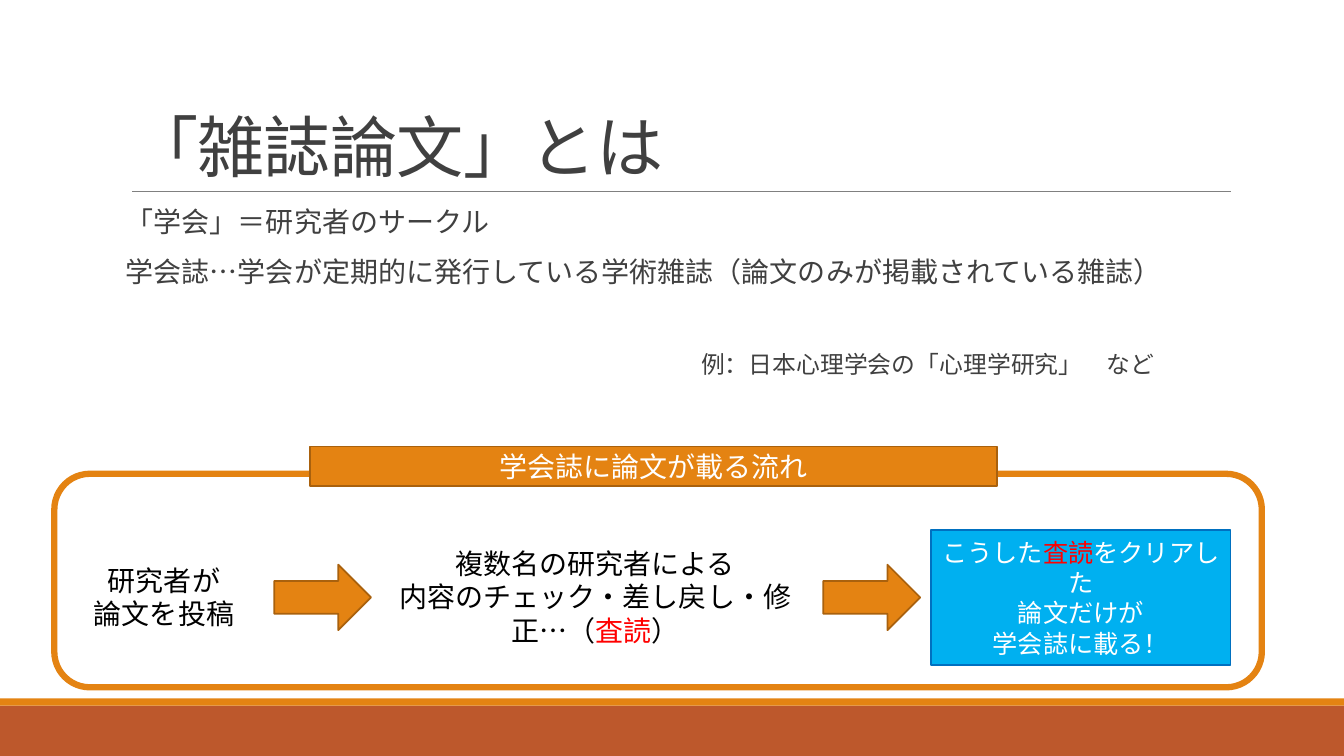
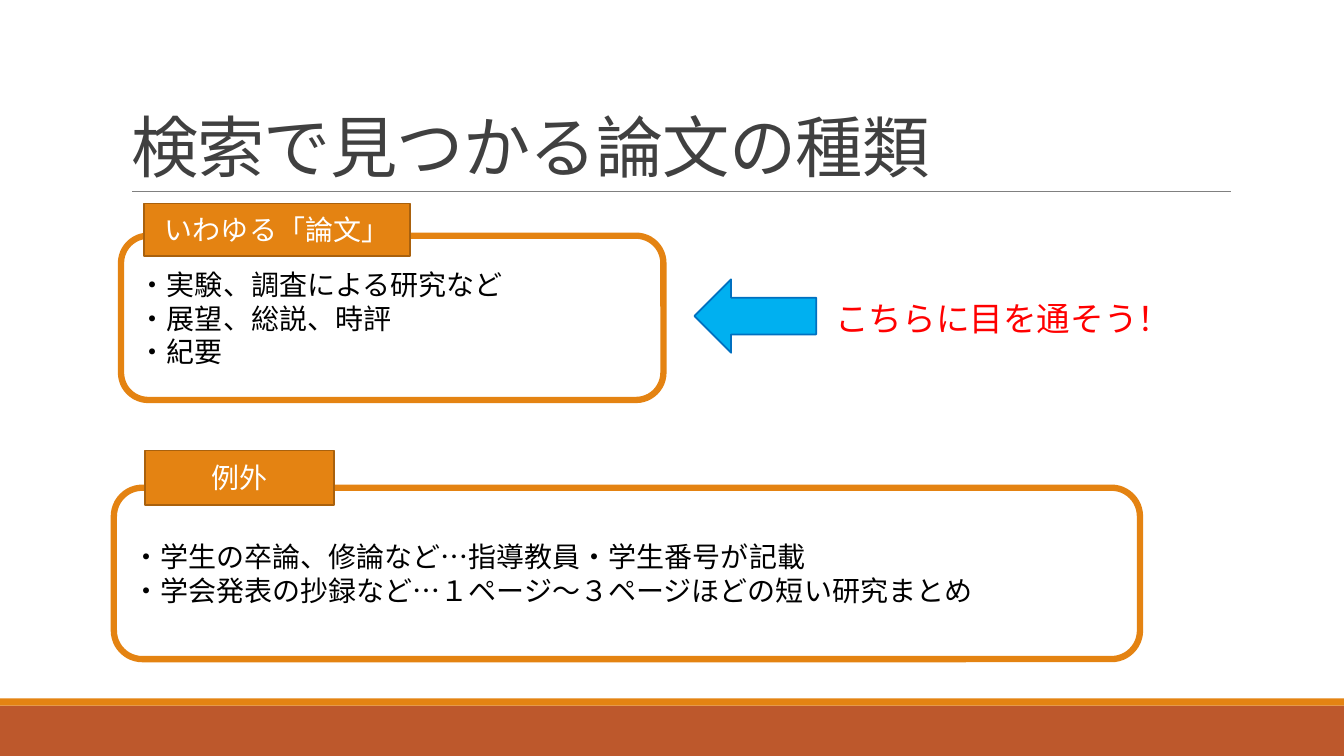
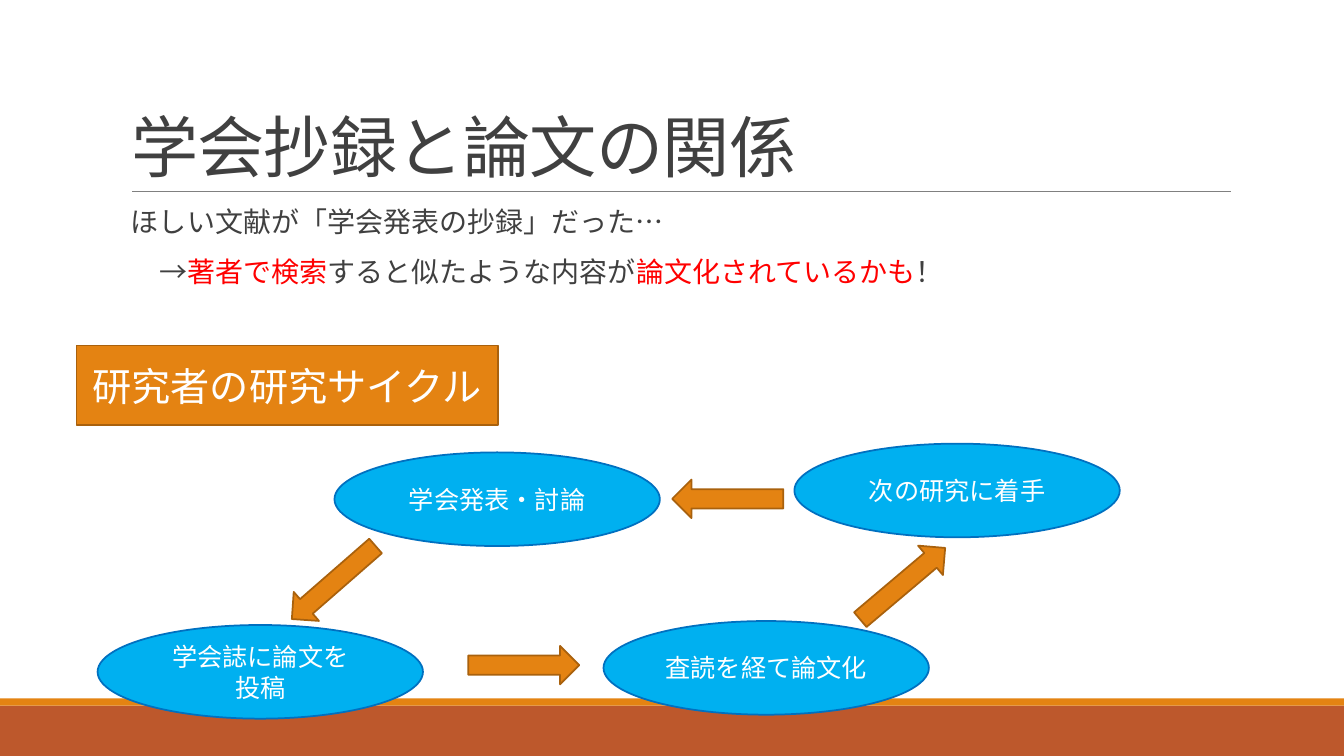
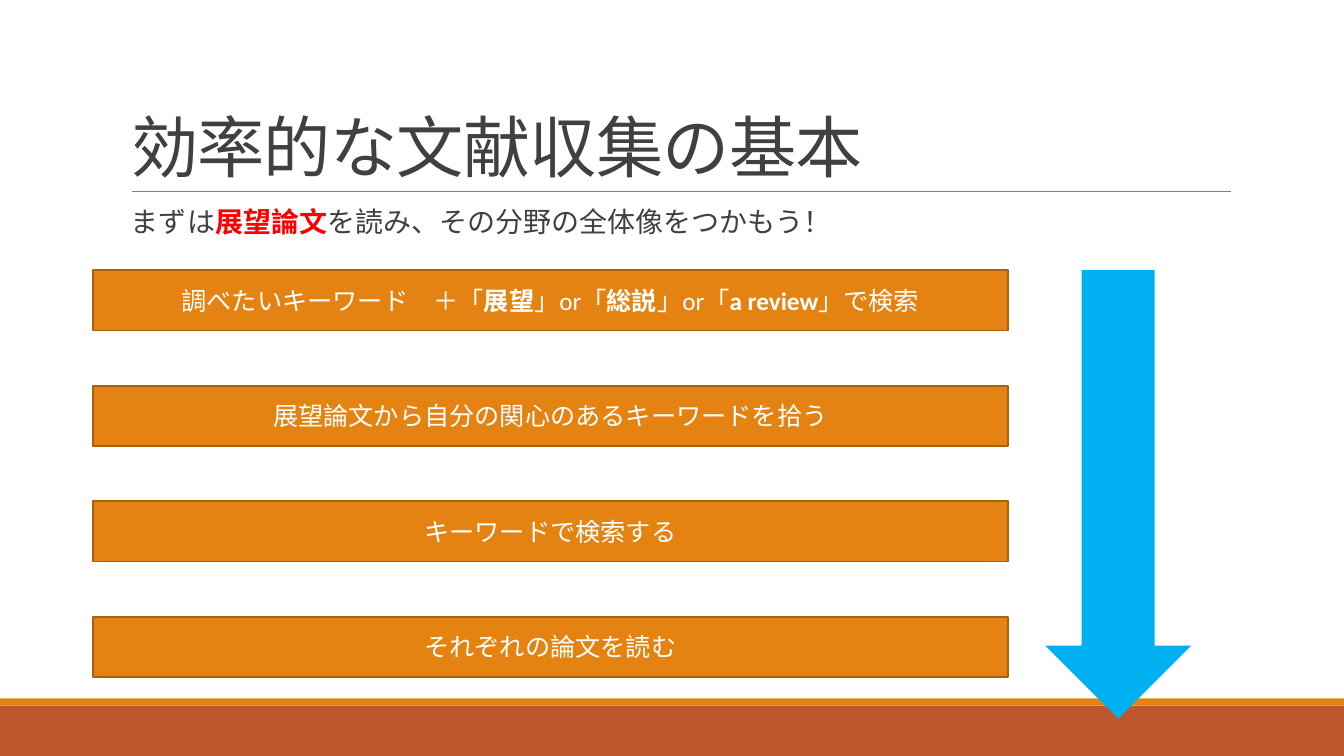
import lxml.etree
import pptx
import pptx.dml.color
import pptx.enum.dml
import pptx.enum.shapes
import pptx.enum.text
import pptx.oxml.ns
import pptx.util

Cm = pptx.util.Cm
Pt = pptx.util.Pt
RGBColor = pptx.dml.color.RGBColor
SHAPE = pptx.enum.shapes.MSO_SHAPE
ANCHOR = pptx.enum.text.MSO_ANCHOR
ALIGN = pptx.enum.text.PP_ALIGN
qn = pptx.oxml.ns.qn

FONT = "Calibri"
WHITE = RGBColor(0xFF, 0xFF, 0xFF)
BLACK = RGBColor(0, 0, 0)
GRAY = RGBColor(0x40, 0x40, 0x40)
RULE_GRAY = RGBColor(0x80, 0x80, 0x80)
RED = RGBColor(0xFF, 0, 0)
ORANGE = RGBColor(0xE4, 0x83, 0x12)
DARK_ORANGE = RGBColor(0xA9, 0x61, 0x0D)
RUST = RGBColor(0xBD, 0x58, 0x2C)
SKY = RGBColor(0x00, 0xB0, 0xF0)
BLUE = RGBColor(0x00, 0x70, 0xC0)


def write(frame, text, size, color, align=ALIGN.CENTER, accent=RED, bold=False):
    """Fill a frame; parts between | marks get the accent colour and weight."""
    frame.word_wrap = True
    frame.text = text
    for paragraph in frame.paragraphs:
        first, *others = paragraph.text.split("|")
        paragraph.text = first
        for other in others:
            paragraph.add_run().text = other
        paragraph.alignment = align
        for number, run in enumerate(paragraph.runs):
            accented = number % 2 == 1
            run.font.name = FONT
            run.font.size = Pt(size)
            run.font.bold = bold and accented
            run.font.color.rgb = accent if accented else color


def add_block(slide, kind, box, fill, line=None, weight=1.25):
    """Add a flat preset shape; box is left, top, width, height in cm."""
    block = slide.shapes.add_shape(kind, *map(Cm, box))
    block.shadow.inherit = False
    block.fill.solid()
    block.fill.fore_color.rgb = fill
    if line is None:
        block.line.fill.background()
    else:
        block.line.color.rgb = line
        block.line.width = Pt(weight)
    block.text_frame.vertical_anchor = ANCHOR.MIDDLE
    return block


prs = pptx.Presentation()
prs.slide_width, prs.slide_height = Cm(33.87), Cm(19.05)
WITH_BODY, TITLE_ONLY = prs.slide_layouts[1], prs.slide_layouts[5]

# Slides with their titles
slides = []
for layout, heading in [
    (WITH_BODY, "「雑誌論文」とは"),
    (TITLE_ONLY, "検索で見つかる論文の種類"),
    (WITH_BODY, "学会抄録と論文の関係"),
    (WITH_BODY, "効率的な文献収集の基本"),
]:
    slide = prs.slides.add_slide(layout)
    title = slide.shapes.title
    title.left, title.top, title.width, title.height = map(Cm, (3.05, 0.79, 27.94, 4.04))
    write(title.text_frame, heading, 48, GRAY, ALIGN.LEFT)
    title.text_frame.vertical_anchor = ANCHOR.BOTTOM
    title.text_frame.auto_size = pptx.enum.text.MSO_AUTO_SIZE.NONE
    title.text_frame.paragraphs[0].line_spacing = 0.85
    title.text_frame.paragraphs[0].runs[0].font._element.set("spc", "-50")
    slides.append(slide)
journal, kinds, cycle, basics = slides

# Bands and title rule, moved to the master so that every slide shows them
footer_band = add_block(journal, SHAPE.RECTANGLE, (0, 17.78, 33.87, 1.27), RUST)
footer_stripe = add_block(journal, SHAPE.RECTANGLE, (0, 17.6, 33.87, 0.18), ORANGE)
title_rule = journal.shapes.add_connector(
    pptx.enum.shapes.MSO_CONNECTOR.STRAIGHT, Cm(3.33), Cm(4.83), Cm(31.01), Cm(4.83))
title_rule.line.color.rgb = RULE_GRAY
title_rule.line.width = Pt(0.5)
lxml.etree.SubElement(title_rule.element.spPr, qn("a:effectLst"))
for position, part in enumerate((footer_band, footer_stripe, title_rule), 2):
    prs.slide_master.shapes.element.insert(position, part.element)

# Body lists: each has a left edge, text, and one indent in cm per paragraph
for slide, left, text, indents, bold in [
    (journal, 2.92,
     "「学会」＝研究者のサークル\n"
     "学会誌…学会が定期的に発行している学術雑誌（論文のみが掲載されている雑誌）\n"
     "例：日本心理学会の「心理学研究」　など", (0.25, 0.25, 14.75), False),
    (cycle, 3.05,
     "ほしい文献が「学会発表の抄録」だった…\n"
     "→|著者で検索|すると似たような内容が|論文化されているかも|！", (0.25, 0.96), False),
    (basics, 3.05,
     "まずは|展望論文|を読み、その分野の全体像をつかもう！", (0.25,), True),
]:
    body = slide.placeholders[1]
    body.left, body.top, body.width, body.height = map(Cm, (left, 5.13, 27.94, 11.2))
    frame = body.text_frame
    write(frame, text, 20, GRAY, ALIGN.LEFT, bold=bold)
    frame.auto_size = pptx.enum.text.MSO_AUTO_SIZE.NONE
    frame.margin_left = frame.margin_right = 0
    for paragraph, indent in zip(frame.paragraphs, indents):
        paragraph.line_spacing = 0.9
        paragraph.space_before, paragraph.space_after = Pt(12), Pt(2)
        properties = paragraph._p.get_or_add_pPr()
        properties.set("marL", str(Cm(indent)))
        properties.set("indent", "0")
        lxml.etree.SubElement(properties, qn("a:buNone"))

example = journal.placeholders[1].text_frame.paragraphs[2]
example.space_before = Pt(44)
example.runs[0].font.size = Pt(17)

# Rounded frames with a label on the upper edge
for slide, frame_box, text, label_box, label in [
    (journal, (1.37, 11.94, 30.43, 5.38), "",
     (7.82, 11.25, 17.3, 0.99), "学会誌に論文が載る流れ"),
    (kinds, (3.05, 5.94, 13.67, 4.14),
     "・実験、調査による研究など\n・展望、総説、時評\n・紀要",
     (3.63, 5.13, 6.71, 1.32), "いわゆる「論文」"),
    (kinds, (2.87, 12.29, 25.86, 4.32),
     "・学生の卒論、修論など…指導教員・学生番号が記載\n"
     "・学会発表の抄録など…１ページ～３ページほどの短い研究まとめ",
     (3.66, 11.35, 4.75, 1.37), "例外"),
]:
    outline = add_block(slide, SHAPE.ROUNDED_RECTANGLE, frame_box, WHITE, ORANGE, 4.5)
    write(outline.text_frame, text, 20, BLACK, ALIGN.LEFT)
    tab = add_block(slide, SHAPE.RECTANGLE, label_box, ORANGE, DARK_ORANGE)
    write(tab.text_frame, label, 20, WHITE)

# Slide 1: steps from submission to publication
for box, text in [
    ((0.91, 14.07, 6.45, 1.96), "研究者が\n論文を投稿"),
    ((9.63, 13.64, 10.74, 2.82),
     "複数名の研究者による\n内容のチェック・差し戻し・修正…（|査読|）"),
]:
    step = journal.shapes.add_textbox(*map(Cm, box))
    write(step.text_frame, text, 20, BLACK)
for left in (6.91, 20.75):
    add_block(journal, SHAPE.RIGHT_ARROW, (left, 14.23, 2.44, 1.65), ORANGE, DARK_ORANGE)
outcome = add_block(journal, SHAPE.RECTANGLE, (23.47, 13.36, 7.54, 3.4), SKY, BLUE)
write(outcome.text_frame, "こうした|査読|をクリアした\n論文だけが\n学会誌に載る！", 18, WHITE)

# Slide 2: advice beside the first frame
add_block(kinds, SHAPE.LEFT_ARROW, (17.5, 7.04, 3.07, 1.85), SKY, BLUE)
advice = kinds.shapes.add_textbox(Cm(20.8), Cm(7.39), Cm(8.46), Cm(1.27))
write(advice.text_frame, "こちらに目を通そう！", 24, RED, ALIGN.LEFT)

# Slide 3: research cycle
cycle_label = add_block(cycle, SHAPE.RECTANGLE, (1.93, 8.71, 10.62, 2.01), ORANGE, DARK_ORANGE)
write(cycle_label.text_frame, "研究者の研究サイクル", 28, WHITE)
for left, top, text in [
    (8.43, 11.4, "学会発表・討論"),
    (2.46, 15.75, "学会誌に論文を\n投稿"),
    (15.21, 15.65, "査読を経て論文化"),
    (20.02, 11.18, "次の研究に着手"),
]:
    stage = add_block(cycle, SHAPE.OVAL, (left, top, 8.2, 2.36), SKY, BLUE)
    write(stage.text_frame, text, 18, WHITE)
ARROW_WIDTH, ARROW_LENGTH = 0.97, 2.8
for center_x, center_y, angle in [
    (8.41, 14.68, 48.9), (13.2, 16.76, 270), (22.75, 14.71, 229.8), (18.34, 12.57, 90),
]:
    arrow_box = (center_x - ARROW_WIDTH / 2, center_y - ARROW_LENGTH / 2,
                 ARROW_WIDTH, ARROW_LENGTH)
    arrow = add_block(cycle, SHAPE.DOWN_ARROW, arrow_box, ORANGE, DARK_ORANGE)
    arrow.rotation = angle

# Slide 4: search steps from top to bottom
add_block(basics, SHAPE.DOWN_ARROW, (26.34, 6.81, 3.68, 11.3), SKY)
for row, text in enumerate([
    "調べたいキーワード　＋「|展望|」or「|総説|」or「|a review|」で検索",
    "展望論文から自分の関心のあるキーワードを拾う",
    "キーワードで検索する",
    "それぞれの論文を読む",
]):
    search_step = add_block(basics, SHAPE.RECTANGLE, (2.34, 6.81 + 2.91 * row, 23.06, 1.52),
                            ORANGE, DARK_ORANGE)
    write(search_step.text_frame, text, 18, WHITE, accent=WHITE, bold=True)

prs.save("out.pptx")
